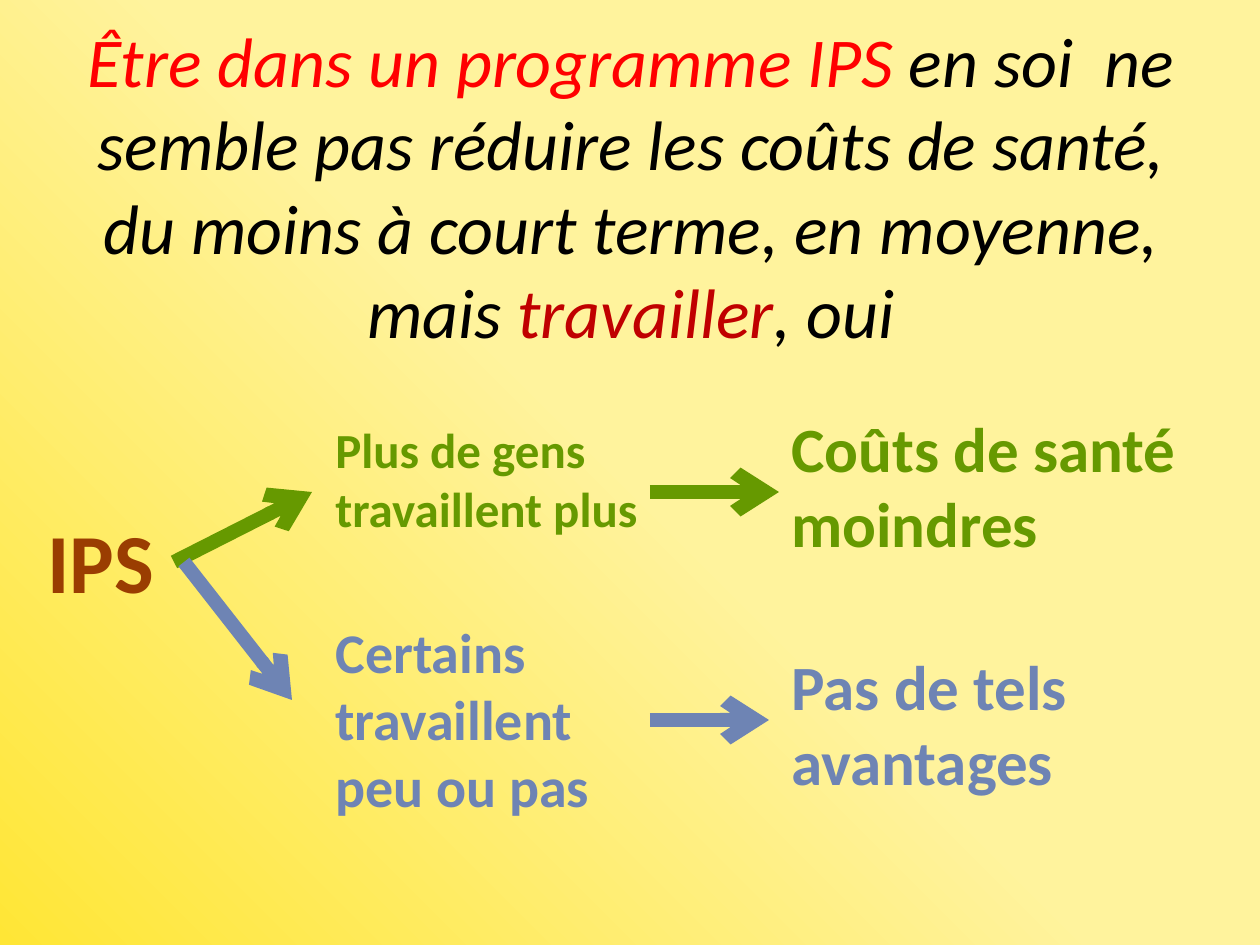
from copy import deepcopy

from lxml import etree
from pptx import Presentation
from pptx import util as u
from pptx.dml.color import RGBColor
from pptx.enum import shapes, text
from pptx.oxml.ns import qn

FONT = "Calibri"
BLACK = RGBColor(0, 0, 0)
RED = RGBColor(0xFF, 0, 0)
DARK_RED = RGBColor(0xC0, 0, 0)
BROWN = RGBColor(0x9A, 0x3D, 0x01)
GREEN = RGBColor(0x66, 0x99, 0)
BLUE = RGBColor(0x6E, 0x84, 0xB4)
YELLOW = RGBColor(0xFF, 0xE6, 0x36)
CREAM = RGBColor(0xFF, 0xF3, 0x9D)

HEADLINE = [
    ("Être dans un programme IPS ", RED),
    ("en soi  ne semble pas réduire les coûts de santé, "
     "du moins à court terme, en moyenne, mais ", BLACK),
    ("travailler", DARK_RED),
    (", oui", BLACK),
]
HEADLINE_BOX = (64, 106, 1134, 158)

START_X, GROUP_X, OUTCOME_X = 35, 323, 779
FORK_Y, GROUP_ARROW_X = 562, 650

# wording, size in points, colour, box in px
LABELS = [
    ("IPS", 48, BROWN, (START_X, 503, 277, 115)),
    ("Plus de gens travaillent plus", 28, GREEN, (GROUP_X, 413, 357, 131)),
    ("Certains travaillent peu ou pas", 32, BLUE, (GROUP_X, 611, 307, 217)),
    ("Coûts de santé moindres", 36, GREEN, (OUTCOME_X, 403, 481, 165)),
    ("Pas de tels avantages", 36, BLUE, (OUTCOME_X, 641, 481, 165)),
]

# colour, start and end in px
ARROWS = [
    (GREEN, (174, FORK_Y), (312, 492)),
    (BLUE, (184, FORK_Y), (292, 700)),
    (GREEN, (GROUP_ARROW_X, 492), (OUTCOME_X, 492)),
    (BLUE, (GROUP_ARROW_X, 720), (769, 720)),
]


def px(*lengths):
    return [u.Emu(round(n * 914400 / 126)) for n in lengths]


def add_run(paragraph, words, **font):
    run = paragraph.add_run()
    run.text = words
    run.font.name = FONT
    run.font.color.rgb = font.pop("color")
    for name, value in font.items():
        setattr(run.font, name, value)


def paint_background(slide):
    fill = slide.background.fill
    fill.gradient()
    fill.gradient_angle = 45
    stops = slide.element.find(".//" + qn("a:gsLst"))
    stops.append(deepcopy(stops[-1]))
    for stop, place, color in zip(fill.gradient_stops, (0, 0.5, 1), (YELLOW, CREAM, CREAM)):
        stop.position = place
        stop.color.rgb = color


def add_headline(slide):
    title = slide.shapes.title
    title.left, title.top, title.width, title.height = px(*HEADLINE_BOX)
    frame = title.text_frame
    frame.auto_size = text.MSO_AUTO_SIZE.NONE
    frame.vertical_anchor = text.MSO_ANCHOR.MIDDLE
    paragraph = frame.paragraphs[0]
    paragraph.alignment = text.PP_ALIGN.CENTER
    for words, color in HEADLINE:
        add_run(paragraph, words, color=color, size=u.Pt(40), italic=True)


def add_label(slide, words, size, color, box):
    frame = slide.shapes.add_textbox(*px(*box)).text_frame
    frame.word_wrap = True
    frame.auto_size = text.MSO_AUTO_SIZE.SHAPE_TO_FIT_TEXT
    add_run(frame.paragraphs[0], words, color=color, size=u.Pt(size), bold=True)


def add_arrow(slide, color, start, end):
    arrow = slide.shapes.add_connector(shapes.MSO_CONNECTOR.STRAIGHT, *px(*start, *end))
    arrow.line.color.rgb = color
    arrow.line.width = u.Pt(8)
    line = arrow.line._get_or_add_ln()
    etree.SubElement(line, qn("a:tailEnd"), type="arrow")
    etree.SubElement(arrow.element.spPr, qn("a:effectLst"))


def main():
    deck = Presentation()
    deck.slide_width, deck.slide_height = px(1260, 945)
    slide = deck.slides.add_slide(deck.slide_layouts[5])
    paint_background(slide)
    add_headline(slide)
    for arrow in ARROWS:
        add_arrow(slide, *arrow)
    for label in LABELS:
        add_label(slide, *label)
    deck.save("out.pptx")


if __name__ == "__main__":
    main()
